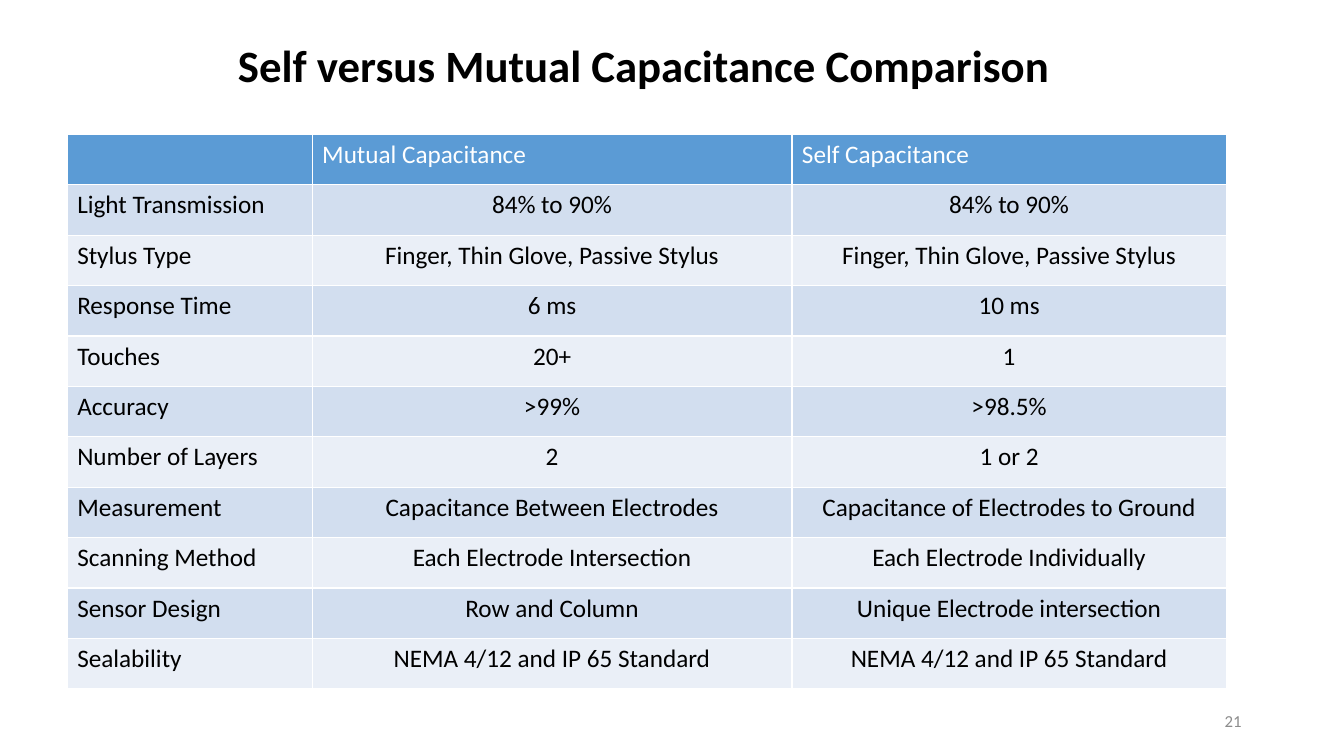
from dataclasses import dataclass

from pptx import Presentation
from pptx.dml.color import RGBColor
from pptx.enum.text import MSO_ANCHOR, MSO_AUTO_SIZE, PP_ALIGN
from pptx.util import Pt

COLORS = {
    "text": "000000",
    "header_text": "FFFFFF",
    "header_fill": "5B9BD5",
    "odd_band": "D2DEEF",
    "even_band": "EAEFF7",
    "page_number": "8C8C8C",
}
FONT = "Calibri"
COLUMN_WIDTHS = (175, 342.7, 310.3)
ROW_HEIGHT = 36


@dataclass(frozen=True)
class Comparison:
    feature: str
    mutual: str
    self_cap: str


HEADER = Comparison("", "Mutual Capacitance", "Self Capacitance")
COMPARISONS = (
    Comparison("Light Transmission", "84% to 90%", "84% to 90%"),
    Comparison("Stylus Type", "Finger, Thin Glove, Passive Stylus", "Finger, Thin Glove, Passive Stylus"),
    Comparison("Response Time", "6 ms", "10 ms"),
    Comparison("Touches", "20+", "1"),
    Comparison("Accuracy", ">99%", ">98.5%"),
    Comparison("Number of Layers", "2", "1 or 2"),
    Comparison("Measurement", "Capacitance Between Electrodes", "Capacitance of Electrodes to Ground"),
    Comparison("Scanning Method", "Each Electrode Intersection", "Each Electrode Individually"),
    Comparison("Sensor Design", "Row and Column", "Unique Electrode intersection"),
    Comparison("Sealability", "NEMA 4/12 and IP 65 Standard", "NEMA 4/12 and IP 65 Standard"),
)


def write_text(frame, text: str, size: float, color: str, align: PP_ALIGN, bold: bool = False) -> None:
    frame.text = text
    paragraph = frame.paragraphs[0]
    paragraph.alignment = align
    paragraph.font.name = FONT
    paragraph.font.size = Pt(size)
    paragraph.font.bold = bold
    paragraph.font.color.rgb = RGBColor.from_string(COLORS[color])


def place_title(title) -> None:
    title.left, title.top, title.width, title.height = Pt(162.7), Pt(23), Pt(599.8), Pt(46)
    frame = title.text_frame
    frame.word_wrap = False
    frame.auto_size = MSO_AUTO_SIZE.SHAPE_TO_FIT_TEXT
    frame.vertical_anchor = MSO_ANCHOR.TOP
    write_text(frame, "Self versus Mutual Capacitance Comparison", 32, "text", PP_ALIGN.LEFT, bold=True)


def fill_row(table, row: int, comparison: Comparison) -> None:
    is_header = row == 0
    band = "header_fill" if is_header else "odd_band" if row % 2 else "even_band"
    ink = "header_text" if is_header else "text"
    table.rows[row].height = Pt(ROW_HEIGHT)
    values = (comparison.feature, comparison.mutual, comparison.self_cap)
    for column, value in enumerate(values):
        cell = table.cell(row, column)
        cell.fill.solid()
        cell.fill.fore_color.rgb = RGBColor.from_string(COLORS[band])
        align = PP_ALIGN.LEFT if is_header or column == 0 else PP_ALIGN.CENTER
        write_text(cell.text_frame, value, 18, ink, align)


def add_comparison_table(slide) -> None:
    rows = (HEADER, *COMPARISONS)
    table = slide.shapes.add_table(
        len(rows), len(COLUMN_WIDTHS), Pt(48), Pt(96), Pt(sum(COLUMN_WIDTHS)), Pt(ROW_HEIGHT * len(rows))
    ).table
    for column, width in zip(table.columns, COLUMN_WIDTHS):
        column.width = Pt(width)
    for row, comparison in enumerate(rows):
        fill_row(table, row, comparison)


def add_page_number(slide) -> None:
    frame = slide.shapes.add_textbox(Pt(678), Pt(500.5), Pt(216), Pt(28.75)).text_frame
    frame.word_wrap = True
    frame.vertical_anchor = MSO_ANCHOR.MIDDLE
    write_text(frame, "21", 12, "page_number", PP_ALIGN.RIGHT)


def main() -> None:
    presentation = Presentation()
    presentation.slide_width, presentation.slide_height = Pt(960), Pt(540)
    slide = presentation.slides.add_slide(presentation.slide_layouts[5])
    place_title(slide.shapes.title)
    add_comparison_table(slide)
    add_page_number(slide)
    presentation.save("out.pptx")


if __name__ == "__main__":
    main()
